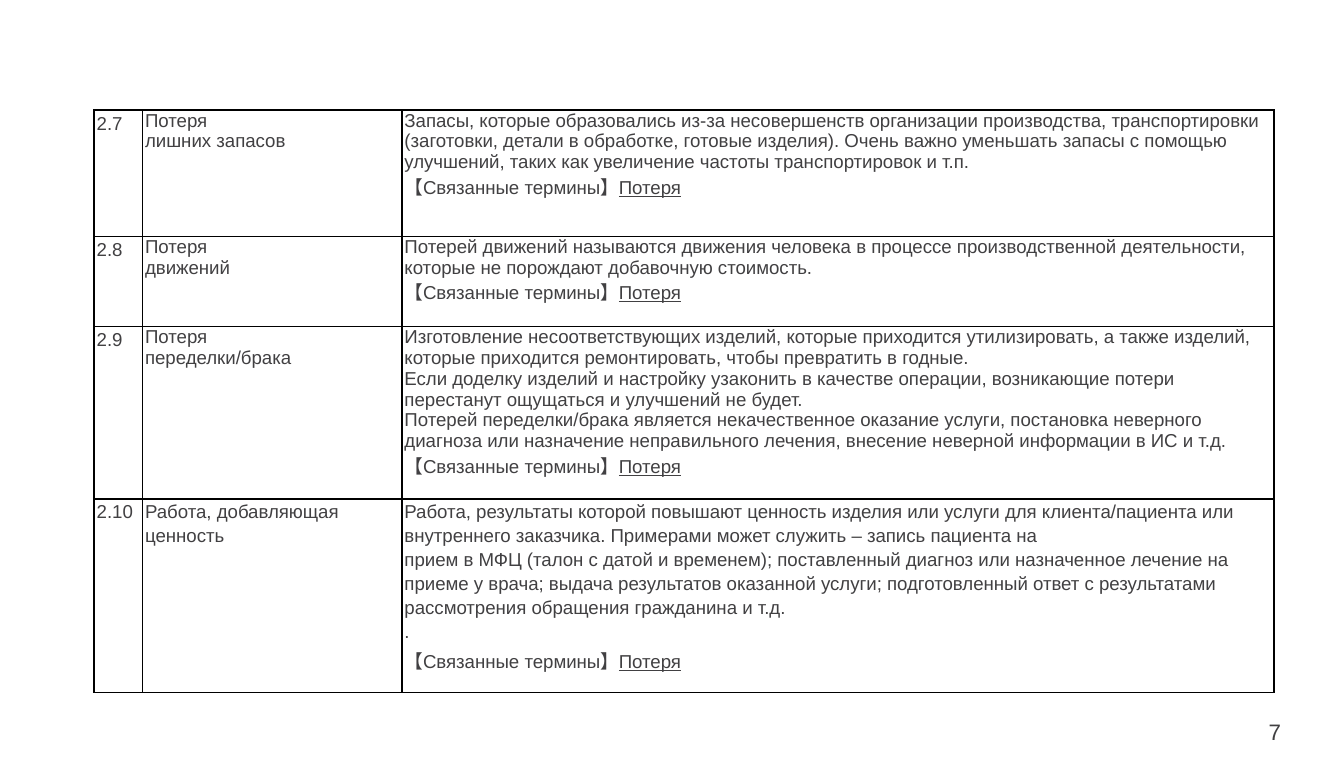
import dataclasses

import pptx
import pptx.dml.color
import pptx.enum.text
import pptx.oxml
import pptx.oxml.ns
import pptx.util
from pptx.util import Inches


@dataclasses.dataclass(frozen=True)
class Theme:
    font: str = "Arial"
    ink: str = "414042"
    border: str = "000000"
    body_size: int = 10
    page_size: int = 12
    border_width: int = 1
    loose: float = 1.15
    single: float = 1.0


THEME = Theme()
RELATED = (("【Связанные термины】", False), ("Потеря", True))
COLUMN_WIDTHS = (0.36, 1.93, 6.49)
TERMS = (
    (0.94, THEME.single, "2.7", ("Потеря", "лишних запасов"), (
        "Запасы, которые образовались из-за несовершенств организации производства, "
        "транспортировки (заготовки, детали в обработке, готовые изделия). Очень важно "
        "уменьшать запасы с помощью улучшений, таких как увеличение частоты "
        "транспортировок и т.п.",
    )),
    (0.67, THEME.single, "2.8", ("Потеря", "движений"), (
        "Потерей движений называются движения человека в процессе производственной "
        "деятельности, которые не порождают добавочную стоимость.",
    )),
    (1.28, THEME.single, "2.9", ("Потеря", "переделки/брака"), (
        "Изготовление несоответствующих изделий, которые приходится утилизировать, "
        "а также изделий, которые приходится ремонтировать, чтобы превратить в годные.",
        "Если доделку изделий и настройку узаконить в качестве операции, возникающие "
        "потери перестанут ощущаться и улучшений не будет.",
        "Потерей переделки/брака является некачественное оказание услуги, постановка "
        "неверного диагноза или назначение неправильного лечения, внесение неверной "
        "информации в ИС и т.д.",
    )),
    (1.44, THEME.loose, "2.10", ("Работа, добавляющая ценность",), (
        "Работа, результаты которой повышают ценность изделия или услуги для "
        "клиента/пациента или внутреннего заказчика. Примерами может служить – запись "
        "пациента на",
        "прием в МФЦ (талон с датой и временем); поставленный диагноз или назначенное "
        "лечение на приеме у врача; выдача результатов оказанной услуги; подготовленный "
        "ответ с результатами рассмотрения обращения гражданина и т.д.",
        ".",
    )),
)


def add_run(paragraph, wording, size, underline=False):
    run = paragraph.add_run()
    run.text = wording
    run.font.name = THEME.font
    run.font.size = pptx.util.Pt(size)
    run.font.color.rgb = pptx.dml.color.RGBColor.from_string(THEME.ink)
    if underline:
        run.font.underline = True


def set_borders(cell):
    properties = cell._tc.get_or_add_tcPr()
    width = pptx.util.Pt(THEME.border_width)
    for position, side in enumerate(("lnL", "lnR", "lnT", "lnB")):
        properties.insert(position, pptx.oxml.parse_xml(
            f'<a:{side} {pptx.oxml.ns.nsdecls("a")} w="{width}"><a:solidFill>'
            f'<a:srgbClr val="{THEME.border}"/></a:solidFill></a:{side}>'))


def fill_cell(cell, paragraphs, spacing):
    cell.margin_left = cell.margin_right = Inches(0.02)
    cell.margin_top = cell.margin_bottom = 0
    cell.fill.background()
    set_borders(cell)
    frame = cell.text_frame
    for index, runs in enumerate(paragraphs):
        paragraph = frame.add_paragraph() if index else frame.paragraphs[0]
        paragraph.line_spacing = spacing
        for wording, underline in runs:
            add_run(paragraph, wording, THEME.body_size, underline)


def plain(lines):
    return [((line, False),) for line in lines]


def add_glossary(slide):
    glossary = slide.shapes.add_table(
        len(TERMS), len(COLUMN_WIDTHS), Inches(0.7), Inches(0.82),
        Inches(sum(COLUMN_WIDTHS)), Inches(sum(term[0] for term in TERMS))).table
    glossary.first_row = glossary.horz_banding = False
    for column, width in zip(glossary.columns, COLUMN_WIDTHS):
        column.width = Inches(width)
    for row, (height, spacing, number, name, definition) in zip(glossary.rows, TERMS):
        row.height = Inches(height)
        number_cell, name_cell, definition_cell = row.cells
        fill_cell(number_cell, plain([number]), THEME.loose)
        fill_cell(name_cell, plain(name), spacing)
        fill_cell(definition_cell, plain(definition) + [RELATED], spacing)


def add_page_number(slide, number):
    frame = slide.shapes.add_textbox(
        Inches(9.09), Inches(5.29), Inches(0.79), Inches(0.3)).text_frame
    frame.word_wrap = True
    frame.vertical_anchor = pptx.enum.text.MSO_ANCHOR.MIDDLE
    frame.margin_left = frame.margin_right = Inches(0.07)
    frame.margin_top = frame.margin_bottom = Inches(0.04)
    paragraph = frame.paragraphs[0]
    paragraph.alignment = pptx.enum.text.PP_ALIGN.CENTER
    add_run(paragraph, number, THEME.page_size)


def main():
    presentation = pptx.Presentation()
    presentation.slide_width = Inches(10)
    presentation.slide_height = Inches(5.63)
    slide = presentation.slides.add_slide(presentation.slide_layouts[6])
    add_page_number(slide, "7")
    add_glossary(slide)
    presentation.save("out.pptx")


if __name__ == "__main__":
    main()
